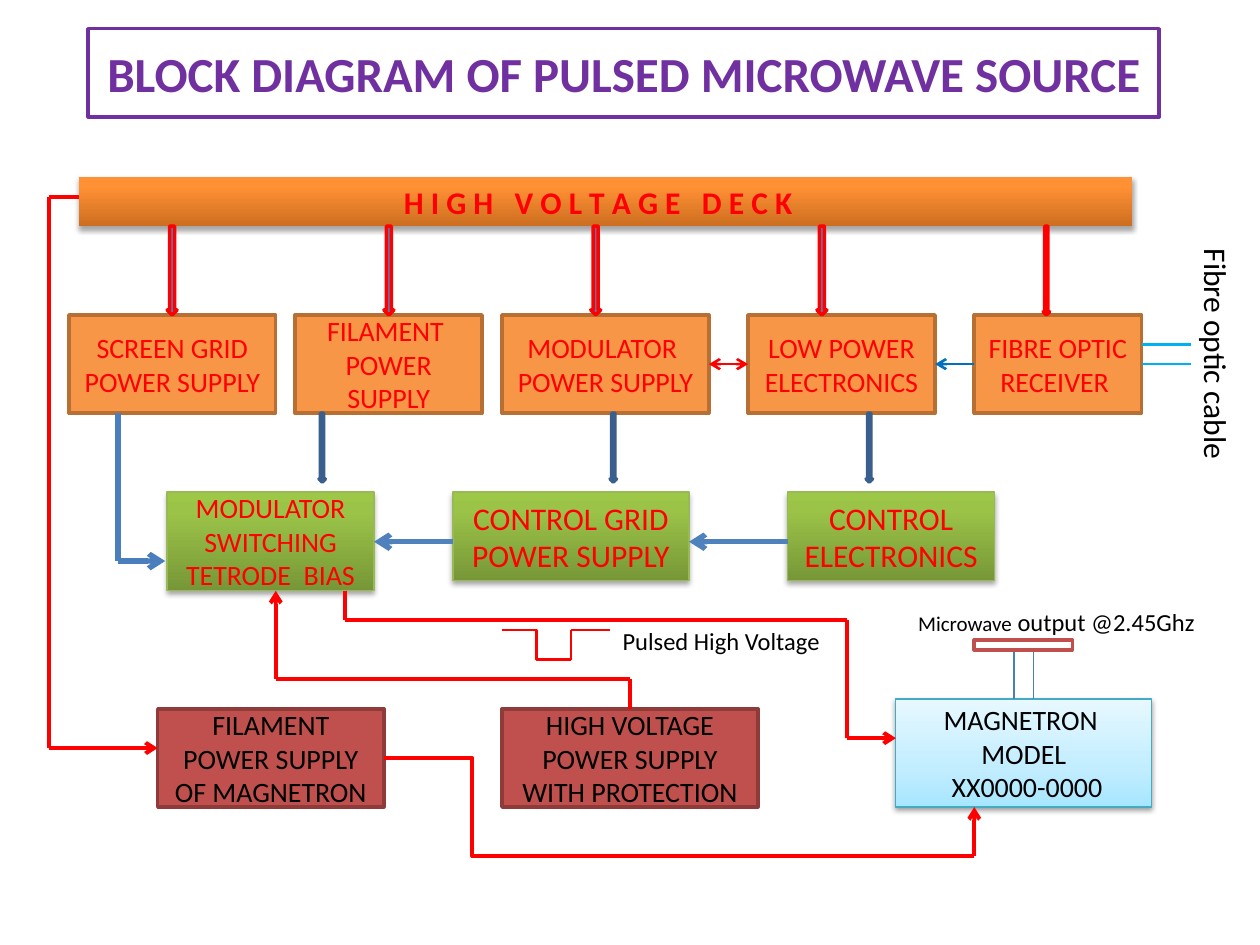
from copy import deepcopy

from lxml import etree
from pptx import Presentation
from pptx import util as u
from pptx.dml.color import RGBColor
from pptx.enum import shapes, text
from pptx.oxml import ns

RED, BLACK, WHITE, PURPLE = "FF0000", "000000", "FFFFFF", "7030A0"
ORANGE, BROWN, BRICK, MAROON = "F79646", "B76F34", "C0504D", "8E3B39"
BLUE, NAVY, THIN_BLUE, SKY = "4F81BD", "3A5F8C", "4B7EBC", "00B0F0"
DECK_STOPS = [(0, "CC6E20"), (80, "FF9034"), (100, "FF9136")]
GREEN_STOPS = [(0, "779737"), (80, "9BC348"), (100, "9DC746")]
ICE_STOPS = [(0, "A7E6FF"), (35, "C1EDFF"), (100, "E7F8FF")]


def rgb(value):
    return RGBColor.from_string(value)


def write(frame, *paragraphs, size=16, color=RED, bold=False, align="CENTER", anchor="MIDDLE"):
    """Fill a frame; a paragraph is a string or a list of (text, size) runs."""
    frame.word_wrap = True
    frame.vertical_anchor = getattr(text.MSO_ANCHOR, anchor)
    for index, content in enumerate(paragraphs):
        paragraph = frame.add_paragraph() if index else frame.paragraphs[0]
        paragraph.alignment = getattr(text.PP_ALIGN, align)
        runs = [(content, size)] if isinstance(content, str) else content
        for words, points in runs:
            run = paragraph.add_run()
            run.text = words
            run.font.name = "Calibri"
            run.font.size = u.Pt(points)
            run.font.bold = bold
            run.font.color.rgb = rgb(color)


class Diagram:
    def __init__(self, slide):
        self.slide = slide

    def shape(self, left, top, width, height, fill, line=None, weight=2, kind="RECTANGLE"):
        item = self.slide.shapes.add_shape(
            getattr(shapes.MSO_SHAPE, kind), *map(u.Cm, (left, top, width, height)))
        item.shadow.inherit = False
        if isinstance(fill, str):
            item.fill.solid()
            item.fill.fore_color.rgb = rgb(fill)
        else:
            self.gradient(item, fill)
        if line:
            item.line.color.rgb = rgb(line)
            item.line.width = u.Pt(weight)
        else:
            item.line.fill.background()
        return item

    def gradient(self, item, stops):
        """Fill from bottom to top, with one stop per (percent, colour)."""
        item.fill.gradient()
        item.fill.gradient_angle = 90
        stop_list = item._element.spPr.find(".//" + ns.qn("a:gsLst"))
        stop_list.append(deepcopy(stop_list[0]))
        for stop, (percent, color) in zip(item.fill.gradient_stops, stops):
            stop.position = percent / 100
            stop.color.rgb = rgb(color)

    def block(self, box, *paragraphs, fill, line=None, weight=2, shadow=None, **style):
        item = self.shape(*box, fill, line, weight)
        if shadow:
            self.drop_shadow(item, *shadow)
        write(item.text_frame, *paragraphs, **style)

    def drop_shadow(self, item, opacity, distance):
        effects = item._element.spPr.find(ns.qn("a:effectLst"))
        outer = etree.SubElement(
            effects, ns.qn("a:outerShdw"), blurRad=str(u.Pt(3.1)),
            dist=str(u.Pt(distance)), dir="5400000", rotWithShape="0")
        color = etree.SubElement(outer, ns.qn("a:srgbClr"), val=BLACK)
        etree.SubElement(color, ns.qn("a:alpha"), val=str(opacity * 1000))

    def label(self, box, *paragraphs, rotation=0, **style):
        item = self.slide.shapes.add_textbox(*map(u.Cm, box))
        item.rotation = rotation
        write(item.text_frame, *paragraphs, color=BLACK, align="LEFT", anchor="TOP", **style)

    def link(self, start, end, color, weight, arrow=False, kind="STRAIGHT"):
        item = self.slide.shapes.add_connector(
            getattr(shapes.MSO_CONNECTOR, kind), *map(u.Cm, (*start, *end)))
        item.line.color.rgb = rgb(color)
        item.line.width = u.Pt(weight)
        properties = item._element.spPr
        if arrow:
            etree.SubElement(properties.find(ns.qn("a:ln")), ns.qn("a:tailEnd"), type="arrow")
        etree.SubElement(properties, ns.qn("a:effectLst"))

    def route(self, *points, color=RED, weight=2.25, arrow=True):
        """Join points by straight lines, with an arrowhead on the last."""
        for index in range(1, len(points)):
            last = index == len(points) - 1
            self.link(points[index - 1], points[index], color, weight, arrow and last)


def draw_blocks(diagram):
    diagram.block((1.78, 0.58, 21.59, 1.78), "BLOCK DIAGRAM OF PULSED MICROWAVE SOURCE",
                  fill=WHITE, line=PURPLE, size=28, color=PURPLE, bold=True)
    diagram.block((1.59, 3.57, 21.23, 0.99), "H I G H   V O L T A G E   D E C K  ",
                  fill=DECK_STOPS, shadow=(35, 1.8), size=18, bold=True)
    for left, width, *lines in (
        (1.39, 4.17, "SCREEN GRID POWER SUPPLY"),
        (5.95, 3.77, "FILAMENT ", "POWER SUPPLY"),
        (10.12, 4.17, "MODULATOR ", "POWER SUPPLY"),
        (15.08, 3.77, "LOW POWER ELECTRONICS"),
        (19.64, 3.37, "FIBRE OPTIC RECEIVER "),
    ):
        diagram.block((left, 6.35, width, 1.98), *lines, fill=ORANGE, line=BROWN)
    for left, width, height, size, name in (
        (3.37, 4.17, 1.98, 16, "MODULATOR SWITCHING TETRODE  BIAS"),
        (9.13, 4.76, 1.79, 18, "CONTROL GRID POWER SUPPLY"),
        (15.88, 4.17, 1.79, 18, "CONTROL ELECTRONICS"),
    ):
        diagram.block((left, 9.92, width, height), name, fill=GREEN_STOPS, line="98B955",
                      weight=0.75, shadow=(35, 1.8), size=size)
    for left, width, name in (
        (3.18, 4.56, "FILAMENT POWER SUPPLY OF MAGNETRON"),
        (10.12, 5.16, "HIGH VOLTAGE POWER SUPPLY WITH PROTECTION"),
    ):
        diagram.block((left, 14.29, width, 1.98), name, fill=BRICK, line=MAROON, color=BLACK)
    diagram.block((18.06, 14.09, 5.16, 2.18), "MAGNETRON  MODEL", " XX0000-0000",
                  fill=ICE_STOPS, line="46AAC5", weight=0.75, shadow=(38, 1.6), color=BLACK)


def draw_connections(diagram):
    for left, width in ((3.37, 0.2), (7.74, 0.2), (11.91, 0.2), (16.47, 0.2), (21.03, 0.13)):
        diagram.shape(left, 4.56, width, 1.79, BLUE, RED, kind="DOWN_ARROW")
    for left in (6.43, 12.3, 17.46):
        diagram.shape(left, 8.33, 0.13, 1.39, BLUE, NAVY, kind="DOWN_ARROW")

    # Between the blocks of a row
    diagram.route((19.64, 7.34), (18.85, 7.34), color="0070C0", weight=1.5)
    for start, end in ((14.68, 15.08), (14.88, 14.29)):
        diagram.route((start, 7.34), (end, 7.34), weight=1.5)
    for start, end in ((15.88, 13.89), (9.13, 7.54)):
        diagram.route((start, 10.92), (end, 10.92), color=BLUE, weight=3)
    for height in (6.94, 7.34):
        diagram.route((23.02, height), (24, height), color=SKY, weight=1.5, arrow=False)

    # Between the rows
    diagram.route((2.38, 8.33), (2.38, 11.31), (3.33, 11.31), color=THIN_BLUE, weight=3)
    diagram.route((1.59, 3.97), (0.99, 3.97), (0.99, 15.08), (3.18, 15.08))
    diagram.route((12.7, 14.29), (12.7, 13.69), (5.56, 13.69), (5.56, 11.91))
    diagram.route((6.95, 11.91), (6.95, 12.5), (17.07, 12.5), (17.07, 14.88), (18.06, 14.88))
    diagram.link((7.74, 15.28), (11.31, 17.26), RED, 2.25, kind="ELBOW")
    diagram.route((10.92, 17.26), (19.64, 17.26), (19.64, 16.27))


def draw_outputs(diagram):
    for left in (20.44, 20.84):
        diagram.route((left, 13.1), (left, 14.09), color=THIN_BLUE, weight=0.75, arrow=False)
    diagram.shape(19.64, 12.9, 1.98, 0.2, WHITE, BRICK)
    diagram.link((10.12, 12.7), (11.51, 13.3), RED, 1.5, kind="ELBOW")
    diagram.route((11.51, 13.3), (11.51, 12.7), (12.3, 12.7), weight=1.5, arrow=False)
    diagram.label((22.05, 6.73, 4.95, 1.02), "Fibre optic cable", rotation=90, size=18)
    diagram.label((18.26, 12.11, 7.14, 0.86), [("Microwave", 12), (" output @2.45Ghz", 14)])
    diagram.label((12.3, 12.5, 4.57, 0.86), "Pulsed High Voltage", size=14)


def main():
    deck = Presentation()
    deck.slide_width, deck.slide_height = u.Cm(25.4), u.Cm(19.05)
    diagram = Diagram(deck.slides.add_slide(deck.slide_layouts[6]))
    draw_blocks(diagram)
    draw_connections(diagram)
    draw_outputs(diagram)
    deck.save("out.pptx")


if __name__ == "__main__":
    main()
